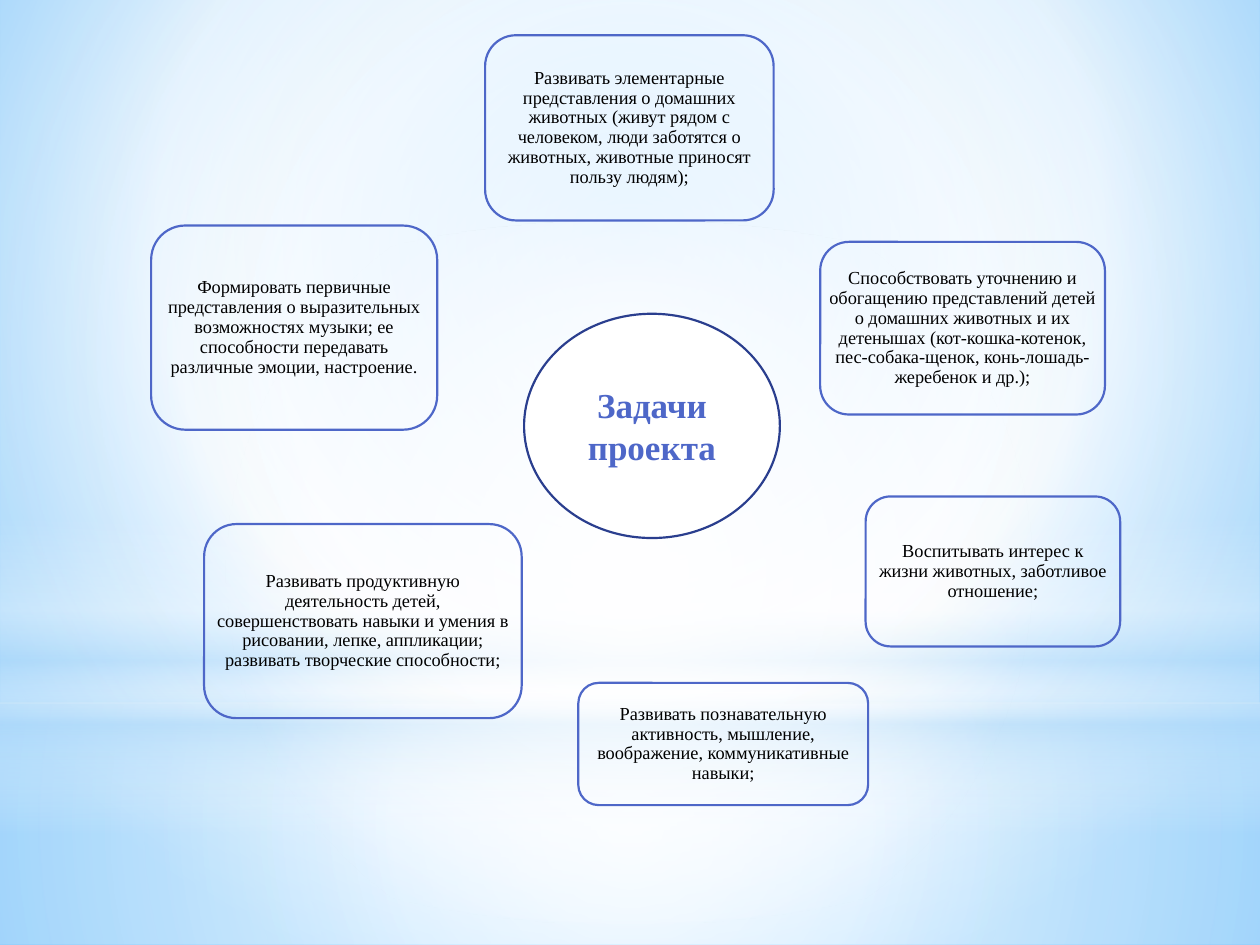
from pptx import Presentation
from pptx.dml.color import RGBColor
from pptx.enum.shapes import MSO_SHAPE as Shape
from pptx.enum.text import MSO_ANCHOR as Anchor, PP_ALIGN as Align
from pptx.oxml import parse_xml
from pptx.oxml.ns import nsdecls, qn
from pptx.util import Inches, Pt

BLACK = RGBColor(0x00, 0x00, 0x00)
WHITE = RGBColor(0xFF, 0xFF, 0xFF)
BLUE = RGBColor(0x4E, 0x67, 0xC8)
NAVY = RGBColor(0x2A, 0x3E, 0x8E)
SKY = RGBColor(0x9E, 0xD5, 0xFF)
AZURE = RGBColor(0x5B, 0xB9, 0xFF)
MIST = RGBColor(0xB4, 0xDC, 0xFA)

COLUMNS, ROWS = 100, 75
CORNER = 1 / 6
CORNER_INSET = 0.29 * CORNER
CENTRE = '<a:path path="circle"><a:fillToRect l="50000" t="50000" r="50000" b="50000"/></a:path>'
UPPER = '<a:path path="circle"><a:fillToRect l="20000" t="10000" r="20000" b="60000"/></a:path>'
DOWNWARD = '<a:lin ang="5400000" scaled="0"/>'

GLOWS = [
    (Shape.RECTANGLE, (0, 55.8, 100, 19.2), CENTRE,
     [(0, WHITE, 91), (37, WHITE, 76), (100, MIST, 79)]),
    (Shape.RECTANGLE, (0, 0, 100, 55.8), CENTRE,
     [(0, WHITE, 89), (48, WHITE, 62), (100, MIST, 79)]),
    (Shape.RECTANGLE, (0, 41.2, 100, 25), DOWNWARD,
     [(0, WHITE, 0), (29, WHITE, 30), (45, MIST, 40), (55, WHITE, 26), (65, MIST, 60), (100, WHITE, 0)]),
    (Shape.OVAL, (0, 17.5, 100, 55.8), CENTRE,
     [(0, WHITE, 100), (56, WHITE, 0)]),
]

TASKS = [
    ((65.1, 19.2, 22.6, 13.7), 0.7,
     "Способствовать уточнению и обогащению представлений детей о домашних животных и их "
     "детенышах (кот-кошка-котенок, пес-собака-щенок, конь-лошадь-жеребенок и др.);"),
    ((68.7, 39.4, 20.2, 11.9), 0.8,
     "Воспитывать интерес к жизни животных, заботливое отношение;"),
    ((45.9, 54.2, 23, 9.7), 0.7,
     "Развивать познавательную активность, мышление, воображение, коммуникативные навыки;"),
    ((16.2, 41.6, 25.2, 15.4), 0.9,
     "Развивать продуктивную деятельность детей, совершенствовать навыки и умения в рисовании, "
     "лепке, аппликации; развивать творческие способности;"),
    ((12, 17.9, 22.7, 16.2), 0.9,
     "Формировать первичные представления о выразительных возможностях музыки; ее способности "
     "передавать различные эмоции, настроение."),
    ((38.5, 2.8, 22.9, 14.7), 0.9,
     "Развивать элементарные представления о домашних животных (живут рядом с человеком, "
     "люди заботятся о животных, животные приносят пользу людям);"),
]


class TaskSlide:
    """Hold the style and the slide, and draw each kind of element on a grid."""

    task_font = {"name": "Times New Roman", "size": Pt(10.5), "bold": False}
    hub_font = {"name": "Times New Roman", "size": Pt(20), "bold": True}
    line_width = Pt(1.25)

    def __init__(self, deck):
        self.column = deck.slide_width / COLUMNS
        self.row = deck.slide_height / ROWS
        self.slide = deck.slides.add_slide(deck.slide_layouts[6])

    def shape(self, kind, area, line=None):
        left, top, width, height = area
        shape = self.slide.shapes.add_shape(
            kind, round(left * self.column), round(top * self.row),
            round(width * self.column), round(height * self.row))
        shape.shadow.inherit = False
        if line is None:
            shape.line.fill.background()
        else:
            shape.line.color.rgb = line
            shape.line.width = self.line_width
        return shape

    def gradient(self, owner, fill, stops, direction):
        fill.gradient()
        stop_xml = "".join(
            f'<a:gs pos="{place * 1000}"><a:srgbClr val="{color}">'
            f'<a:alpha val="{opacity * 1000}"/></a:srgbClr></a:gs>'
            for place, color, opacity in stops)
        plain = owner.element.find(".//" + qn("a:gradFill"))
        plain.getparent().replace(plain, parse_xml(
            f'<a:gradFill {nsdecls("a")} rotWithShape="1"><a:gsLst>{stop_xml}</a:gsLst>'
            f'{direction}</a:gradFill>'))

    def background(self, stops, direction):
        self.gradient(self.slide, self.slide.background.fill, stops, direction)

    def glow(self, kind, area, direction, stops):
        shape = self.shape(kind, area)
        self.gradient(shape, shape.fill, stops, direction)

    def label(self, shape, text, font, color, spacing=1.0):
        frame = shape.text_frame
        frame.word_wrap = True
        frame.vertical_anchor = Anchor.MIDDLE
        para = frame.paragraphs[0]
        para.alignment = Align.CENTER
        para.line_spacing = spacing
        span = para.add_run()
        span.text = text
        for name, value in font.items():
            setattr(span.font, name, value)
        span.font.color.rgb = color

    def task(self, area, inset, text):
        box = self.shape(Shape.ROUNDED_RECTANGLE, area, BLUE)
        box.adjustments[0] = CORNER
        box.fill.background()
        margin = round(max(0, inset - CORNER_INSET * area[3]) * self.row)
        for side in ("left", "top", "right", "bottom"):
            setattr(box.text_frame, f"margin_{side}", margin)
        self.label(box, text, self.task_font, BLACK, 0.9)

    def hub(self, area, text):
        oval = self.shape(Shape.OVAL, area, NAVY)
        oval.fill.solid()
        oval.fill.fore_color.rgb = WHITE
        self.label(oval, text, self.hub_font, BLUE)


def main():
    deck = Presentation()
    deck.slide_width, deck.slide_height = Inches(10), Inches(7.5)
    page = TaskSlide(deck)
    page.background([(0, SKY, 100), (60, WHITE, 100), (100, AZURE, 100)], UPPER)
    for glow in GLOWS:
        page.glow(*glow)
    for task in TASKS:
        page.task(*task)
    page.hub((41.6, 24.9, 20.3, 17.8), "Задачи проекта")
    deck.save("out.pptx")


if __name__ == "__main__":
    main()
